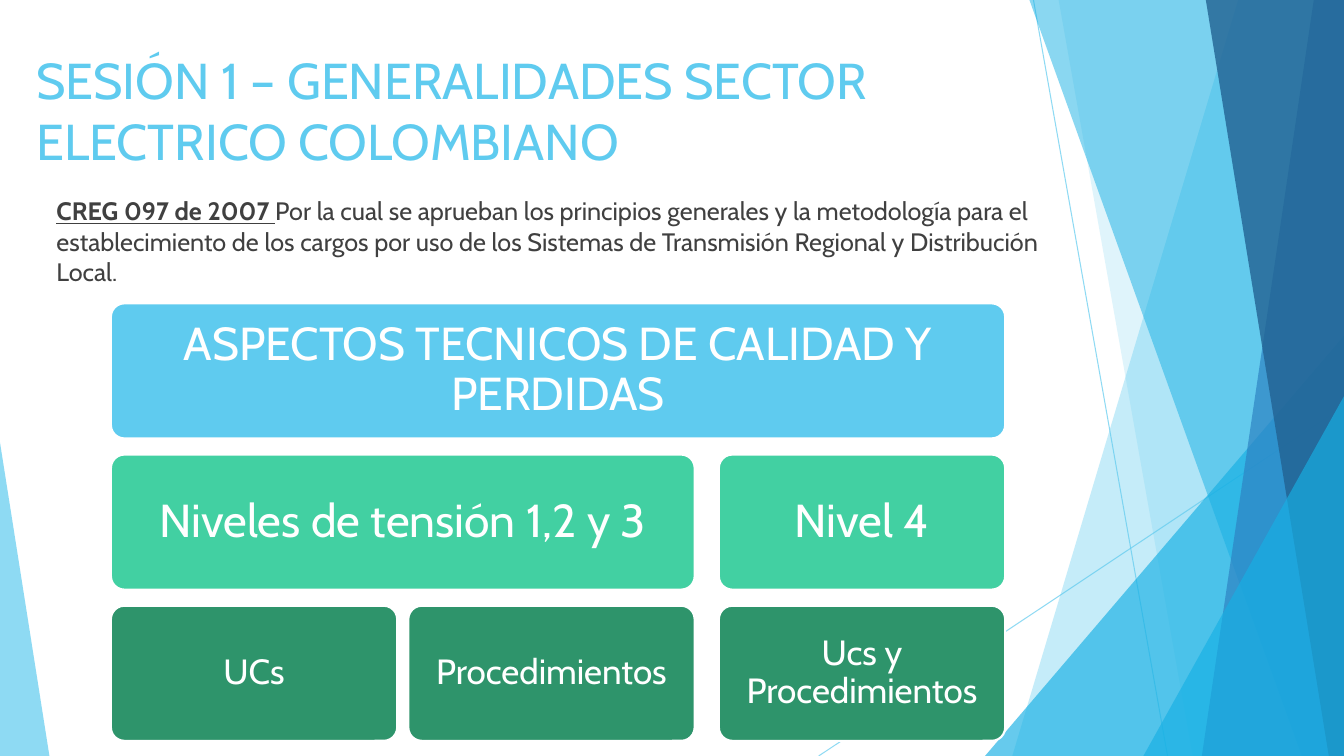
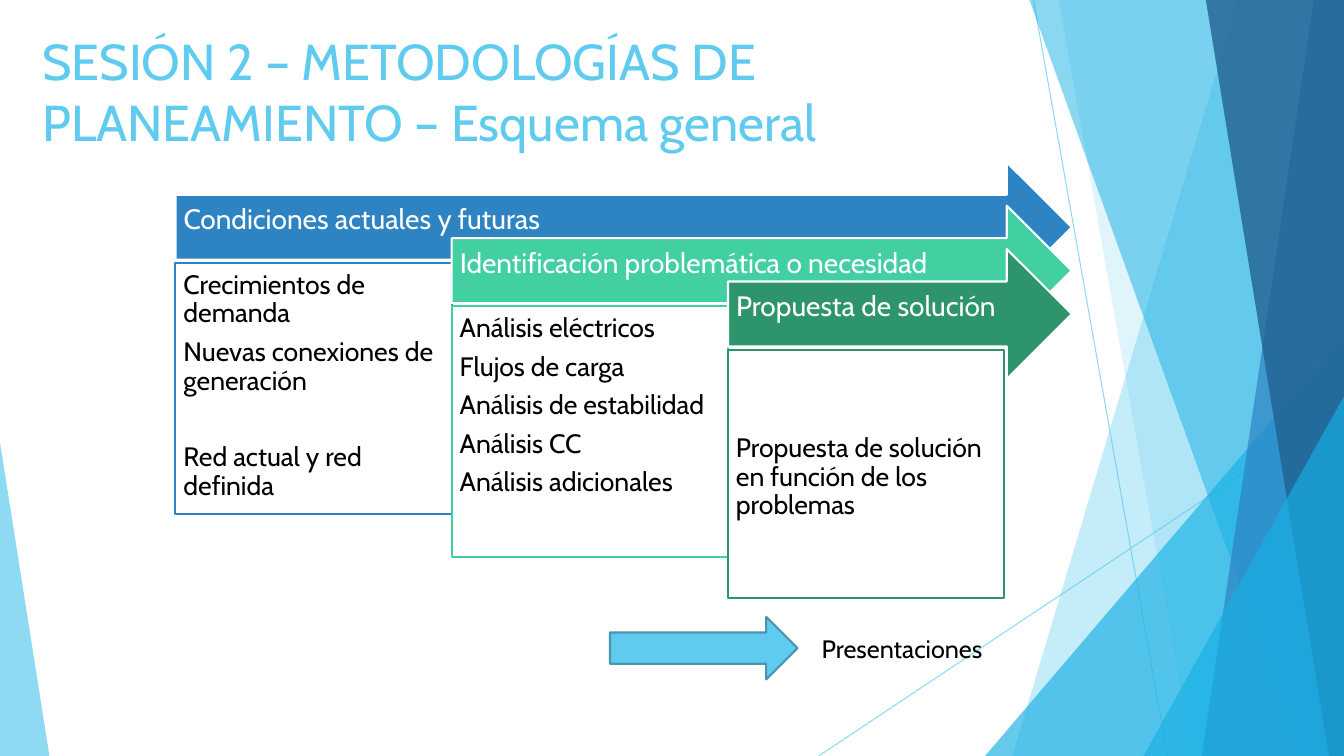
from dataclasses import dataclass

from lxml.etree import SubElement
from pptx import Presentation
from pptx.dml.color import RGBColor
from pptx.enum.shapes import MSO_CONNECTOR, MSO_SHAPE as SHAPE
from pptx.enum.text import MSO_ANCHOR as ANCHOR, MSO_AUTO_SIZE, PP_ALIGN as ALIGN
from pptx.oxml.ns import qn
from pptx.util import Inches, Pt

WIDTH, HEIGHT = 13.33, 7.5
TITLE_AND_BODY, TITLE_ONLY = 1, 5


@dataclass(frozen=True)
class Theme:
    font: str = "Cabin"
    sky: str = "5FCBEF"
    cyan: str = "17B0E4"
    blue: str = "2E83C3"
    navy: str = "226292"
    mint: str = "42D0A2"
    green: str = "2E946B"
    outline: str = "4696B1"
    text: str = "404040"
    black: str = "000000"
    white: str = "FFFFFF"
    title_size: int = 36
    body_size: int = 18
    box_size: int = 33
    small_box_size: int = 25
    arrow_size: int = 20
    panel_size: int = 19


def rgb(color):
    return RGBColor.from_string(color)


def set_alpha(sp, percent):
    """Make the first colour of the shape, its fill or line, translucent."""
    color = next(sp.element.spPr.iter(qn("a:srgbClr")))
    SubElement(color, qn("a:alpha")).set("val", str(percent * 1000))


class Deck:
    def __init__(self, theme):
        self.theme = theme
        self.prs = Presentation()
        self.prs.slide_width, self.prs.slide_height = Inches(WIDTH), Inches(HEIGHT)
        self.s = None

    def slide(self, layout):
        self.s = self.prs.slides.add_slide(self.prs.slide_layouts[layout])

    def run(self, p, text, size, color, bold=False, underline=False):
        r = p.add_run()
        r.text = text
        f = r.font
        f.name, f.size, f.color.rgb = self.theme.font, Pt(size), rgb(color)
        f.bold, f.underline = bold, underline

    def placeholder(self, sp, left, top, width, height):
        """Move a placeholder and return its first paragraph."""
        sp.left, sp.top = Inches(left), Inches(top)
        sp.width, sp.height = Inches(width), Inches(height)
        tf = sp.text_frame
        tf.word_wrap, tf.auto_size = True, MSO_AUTO_SIZE.NONE
        tf.vertical_anchor = ANCHOR.TOP
        p = tf.paragraphs[0]
        p.alignment = ALIGN.LEFT
        return p

    def title(self, text, left, top):
        p = self.placeholder(self.s.shapes.title, left, top, 9.4, 1.44)
        self.run(p, text, self.theme.title_size, self.theme.sky)

    def body(self, lead, text, left, top, width, height):
        t = self.theme
        p = self.placeholder(self.s.placeholders[1], left, top, width, height)
        p.space_before = Pt(10)
        pPr = p._p.get_or_add_pPr()
        pPr.set("marL", "0")
        pPr.set("indent", "0")
        SubElement(pPr, qn("a:buNone"))
        self.run(p, lead, t.body_size, t.text, bold=True, underline=True)
        self.run(p, text, t.body_size, t.text)

    def shape(self, kind, left, top, width, height, fill, line=None, adjust=()):
        sp = self.s.shapes.add_shape(
            kind, Inches(left), Inches(top), Inches(width), Inches(height))
        for i, value in enumerate(adjust):
            sp.adjustments[i] = value
        return self.paint(sp, fill, line)

    def paint(self, sp, fill, line=None):
        sp.shadow.inherit = False
        sp.fill.solid()
        sp.fill.fore_color.rgb = rgb(fill)
        if line:
            sp.line.color.rgb, sp.line.width = rgb(line), Pt(1.5)
        else:
            sp.line.fill.background()
        return sp

    def fill_text(self, sp, lines, size, color, insets, align=ALIGN.LEFT,
                  anchor=ANCHOR.MIDDLE):
        tf = sp.text_frame
        tf.word_wrap, tf.vertical_anchor = True, anchor
        (tf.margin_left, tf.margin_top,
         tf.margin_right, tf.margin_bottom) = map(Inches, insets)
        for i, text in enumerate(lines):
            p = tf.add_paragraph() if i else tf.paragraphs[0]
            p.alignment, p.line_spacing = align, 0.9
            p.space_after = Pt(round(0.35 * size))
            self.run(p, text, size, color)
        return tf

    def box(self, text, left, top, width, fill, size, inset):
        white = self.theme.white
        sp = self.shape(SHAPE.ROUNDED_RECTANGLE, left, top, width, 1.34,
                        fill, white, [0.1])
        self.fill_text(sp, [text], size, white, [inset] * 4, ALIGN.CENTER)

    def arrow(self, text, left, top, width, fill):
        t = self.theme
        sp = self.shape(SHAPE.RIGHT_ARROW, left, top, width, 1.29, fill, t.white)
        self.fill_text(sp, [text], t.arrow_size, t.white, (0.08, 0.08, 0.28, 0.21))

    def panel(self, lines, left, top, height, line, inset_top=0.08):
        t = self.theme
        sp = self.shape(SHAPE.RECTANGLE, left, top, 2.74, height, t.white, line)
        return self.fill_text(sp, lines, t.panel_size, t.black,
                              (0.08, inset_top, 0.08, 0.08), anchor=ANCHOR.TOP)

    def label(self, text, left, top, width, height):
        tb = self.s.shapes.add_textbox(
            Inches(left), Inches(top), Inches(width), Inches(height))
        tf = tb.text_frame
        tf.word_wrap, tf.auto_size = False, MSO_AUTO_SIZE.SHAPE_TO_FIT_TEXT
        self.run(tf.paragraphs[0], text, self.theme.body_size, self.theme.black)

    def to_master(self, sp, alpha):
        set_alpha(sp, alpha)
        tree = self.prs.slide_master.shapes.element
        tree.insert_element_before(sp.element, "p:extLst")

    def hairline(self, x1, y1, x2, y2):
        c = self.s.shapes.add_connector(
            MSO_CONNECTOR.STRAIGHT, *map(Inches, (x1, y1, x2, y2)))
        c.line.color.rgb, c.line.width = rgb(self.theme.sky), Pt(0.75)
        SubElement(c.element.spPr, qn("a:effectLst"))
        self.to_master(c, 70)

    def strip(self, x_top, x_bottom, fill, alpha):
        """Full-height band from a slanted left edge to the slide's right edge."""
        right, bottom = Inches(WIDTH), Inches(HEIGHT)
        fb = self.s.shapes.build_freeform(Inches(x_top), 0)
        fb.add_line_segments(
            [(right, 0), (right, bottom), (Inches(x_bottom), bottom)], close=True)
        self.to_master(self.paint(fb.convert_to_shape(), fill), alpha)

    def corner(self, left, top, width, tip, fill, alpha):
        """Triangle standing on the slide's bottom edge."""
        sp = self.shape(SHAPE.ISOSCELES_TRIANGLE, left, top, width, HEIGHT - top,
                        fill, adjust=[tip])
        self.to_master(sp, alpha)

    def backdrop(self):
        """Draw the facets on the current slide and hand them to the master."""
        t = self.theme
        self.hairline(10.25, 0, 11.58, HEIGHT)
        self.hairline(WIDTH, 4.03, 8.12, HEIGHT)
        self.strip(12.28, 10.04, t.sky, 36)
        self.strip(10.5, 11.83, t.sky, 20)
        self.corner(9.77, 3.33, 3.56, 1, t.cyan, 66)
        self.strip(10.21, 12.91, t.cyan, 50)
        self.strip(13.03, 11.92, t.blue, 70)
        self.strip(11.96, 13.18, t.navy, 80)
        self.corner(11.34, 3.93, 1.99, 1, t.cyan, 66)
        self.corner(0, 4.39, 0.49, 0, t.sky, 70)


def regulation_slide(deck):
    t = deck.theme
    deck.title("SESIÓN 1 – GENERALIDADES SECTOR ELECTRICO COLOMBIANO", 0.26, 0.44)
    deck.body("CREG 097 de 2007 ",
              "Por la cual se aprueban los principios generales y la metodología para el "
              "establecimiento de los cargos por uso de los Sistemas de Transmisión "
              "Regional y Distribución Local.", 0.46, 1.89, 10.06, 5.1)
    lefts, column = (1.1, 4.05, 7.13), 2.84
    rows = [
        (t.sky, t.box_size, 0.14, [("ASPECTOS TECNICOS DE CALIDAD Y PERDIDAS", 0, 2)]),
        (t.mint, t.box_size, 0.14,
         [("Niveles de tensión 1,2 y 3", 0, 1), ("Nivel 4", 2, 2)]),
        (t.green, t.small_box_size, 0.1,
         [("UCs", 0, 0), ("Procedimientos", 1, 1), ("Ucs y Procedimientos", 2, 2)]),
    ]
    for i, (fill, size, inset, boxes) in enumerate(rows):
        for text, first, last in boxes:
            width = lefts[last] + column - lefts[first]
            deck.box(text, lefts[first], 3.01 + 1.5 * i, width, fill, size, inset)


def planning_slide(deck):
    t = deck.theme
    deck.title("SESIÓN 2 – METODOLOGÍAS DE PLANEAMIENTO – Esquema general", 0.32, 0.25)
    stages = [
        ("Condiciones actuales y futuras", t.blue, 2.49, 0.08,
         ["Crecimientos de demanda", "Nuevas conexiones de generación",
          "Red actual y red definida"]),
        ("Identificación problemática o necesidad", t.mint, 2.49, 0.08,
         ["Análisis eléctricos", "Flujos de carga", "Análisis de estabilidad",
          "Análisis CC", "Análisis adicionales"]),
        ("Propuesta de solución", t.green, 2.46, 0.84,
         ["Propuesta de solución en función de los problemas"]),
    ]
    frames = []
    for i, (heading, color, height, inset_top, lines) in enumerate(stages):
        left, top = 1.74 + 2.74 * i, 1.61 + 0.43 * i
        deck.arrow(heading, left, top, 10.63 - left, color)
        frames.append(deck.panel(lines, left, top + 1, height, color, inset_top))
    frames[0].paragraphs[-1].space_before = Pt(27)
    deck.shape(SHAPE.RIGHT_ARROW, 6.05, 6.12, 1.86, 0.62, t.sky, t.outline)
    deck.label("Presentaciones", 8.05, 6.23, 1.89, 0.4)


def main():
    deck = Deck(Theme())
    deck.slide(TITLE_AND_BODY)
    deck.backdrop()
    regulation_slide(deck)
    deck.slide(TITLE_ONLY)
    planning_slide(deck)
    deck.prs.save("out.pptx")


if __name__ == "__main__":
    main()
